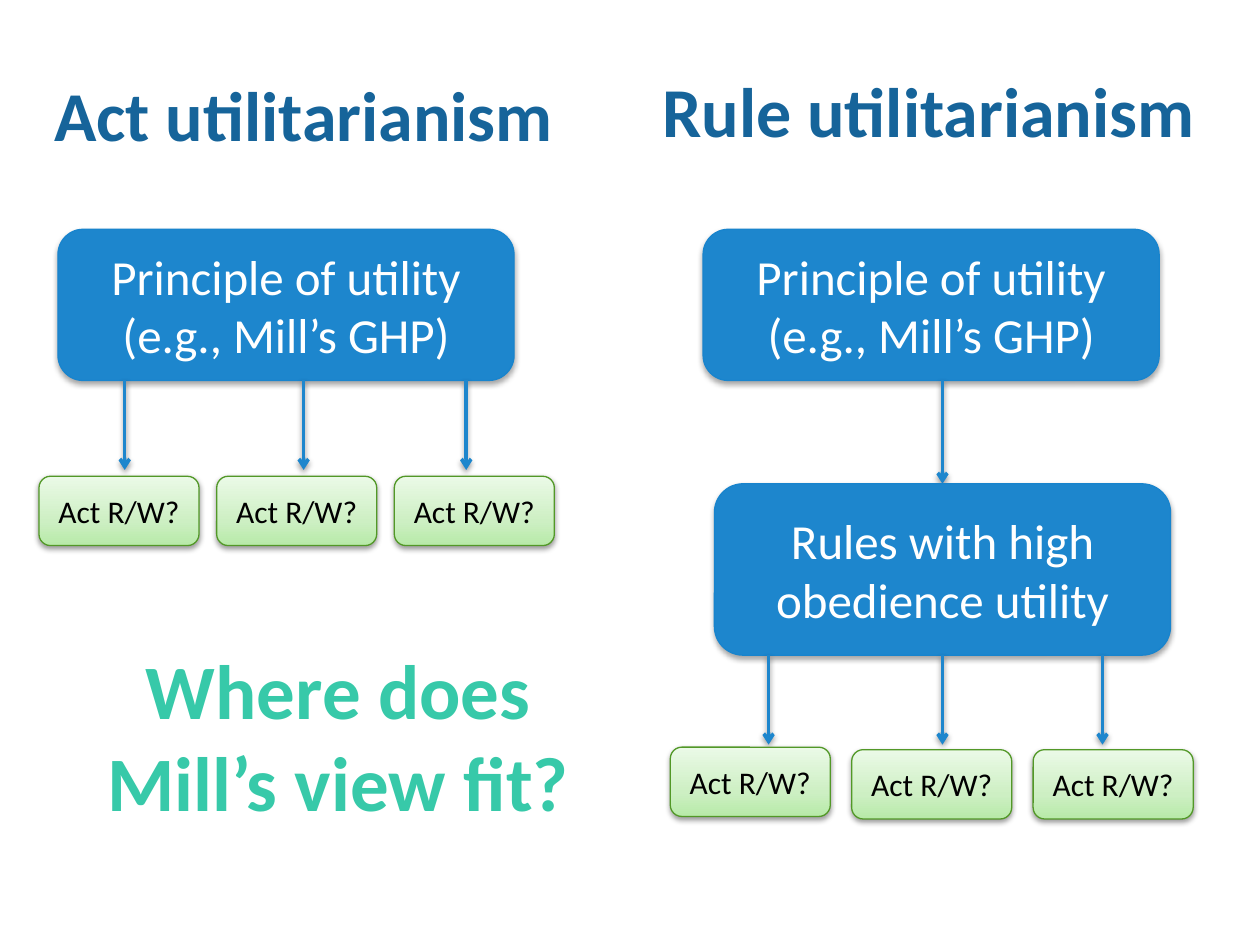
import copy

import pptx
import pptx.dml.color
import pptx.enum.shapes
import pptx.enum.text
import pptx.oxml
import pptx.oxml.ns
import pptx.util

FONT = "Calibri"
COLORS = {
    "heading": "16649A",
    "box": "1D86CD",
    "box_line": "1884CD",
    "box_text": "FFFFFF",
    "act_line": "529827",
    "act_text": "000000",
    "question": "37C9A9",
}
ACT_GRADIENT = [(0, "B7EAA8"), (0.35, "CDEFC3"), (1, "EBFAE7")]

BOX_WIDTH, BOX_HEIGHT, BOX_TOP = 3.62, 1.2, 1.82
RULES_TOP, RULES_HEIGHT = 3.84, 1.36
ACT_WIDTH, ACT_HEIGHT = 1.27, 0.55
ARROW_LENGTH = 0.71

qn = pptx.oxml.ns.qn
Inches = pptx.util.Inches


def rgb(name):
    return pptx.dml.color.RGBColor.from_string(COLORS.get(name, name))


def write_text(shape, text, size, color, align, bold=False):
    frame = shape.text_frame
    frame.word_wrap = True
    paragraph = frame.paragraphs[0]
    paragraph.text = text
    paragraph.alignment = align
    font = paragraph.font
    font.name, font.size, font.bold = FONT, pptx.util.Pt(size), bold
    font.color.rgb = rgb(color)


def add_shadow(shape, distance=20000, opacity=38):
    """Append a soft downward shadow; call after fill and line are set."""
    shape._element.spPr.append(pptx.oxml.parse_xml(
        f'<a:effectLst {pptx.oxml.ns.nsdecls("a")}>'
        f'<a:outerShdw blurRad="40000" dist="{distance}" dir="5400000" rotWithShape="0">'
        f'<a:srgbClr val="000000"><a:alpha val="{opacity * 1000}"/></a:srgbClr>'
        '</a:outerShdw></a:effectLst>'))


def format_label(shape, left, top, width, height, text, size, color, align):
    """Place bold text in a title placeholder or a text box."""
    shape.left, shape.top = Inches(left), Inches(top)
    shape.width, shape.height = Inches(width), Inches(height)
    write_text(shape, text, size, color, align, bold=True)
    shape.text_frame.vertical_anchor = pptx.enum.text.MSO_ANCHOR.TOP
    shape.text_frame.auto_size = pptx.enum.text.MSO_AUTO_SIZE.SHAPE_TO_FIT_TEXT


def add_rounded(slide, left, top, width, height, line_color):
    shape = slide.shapes.add_shape(
        pptx.enum.shapes.MSO_SHAPE.ROUNDED_RECTANGLE,
        Inches(left), Inches(top), Inches(width), Inches(height))
    shape.line.color.rgb = rgb(line_color)
    shape.line.width = pptx.util.Pt(0.75)
    shape.text_frame.vertical_anchor = pptx.enum.text.MSO_ANCHOR.MIDDLE
    return shape


def add_box(slide, left, top, height, text):
    shape = add_rounded(slide, left, top, BOX_WIDTH, height, "box_line")
    shape.fill.solid()
    shape.fill.fore_color.rgb = rgb("box")
    add_shadow(shape, distance=23000, opacity=35)
    write_text(shape, text, 28, "box_text", pptx.enum.text.PP_ALIGN.CENTER)


def add_act(slide, left, top):
    shape = add_rounded(slide, left, top, ACT_WIDTH, ACT_HEIGHT, "act_line")
    shape.fill.gradient()
    shape.fill.gradient_angle = 90
    # The default gradient has two stops; add the third
    stops = shape._element.spPr.find(".//" + qn("a:gsLst"))
    stops.append(copy.deepcopy(stops[0]))
    for stop, (position, color) in zip(shape.fill.gradient_stops, ACT_GRADIENT):
        stop.position = position
        stop.color.rgb = rgb(color)
    add_shadow(shape)
    write_text(shape, "Act R/W?", 18, "act_text", pptx.enum.text.PP_ALIGN.CENTER)


def add_arrow(slide, x, top, length=ARROW_LENGTH):
    arrow = slide.shapes.add_connector(
        pptx.enum.shapes.MSO_CONNECTOR.STRAIGHT,
        Inches(x), Inches(top), Inches(x), Inches(top + length))
    arrow.line.color.rgb = rgb("box")
    arrow.line.width = pptx.util.Pt(2)
    line = arrow._element.spPr.find(qn("a:ln"))
    line.append(pptx.oxml.parse_xml(
        f'<a:tailEnd {pptx.oxml.ns.nsdecls("a")} type="arrow"/>'))
    add_shadow(arrow)


def main():
    presentation = pptx.Presentation()
    presentation.slide_width, presentation.slide_height = Inches(10), Inches(7.5)
    slide = presentation.slides.add_slide(presentation.slide_layouts[5])
    left_align = pptx.enum.text.PP_ALIGN.LEFT
    center = pptx.enum.text.PP_ALIGN.CENTER
    principle = "Principle of utility (e.g., Mill’s GHP)"
    box_bottom = BOX_TOP + BOX_HEIGHT
    rules_bottom = RULES_TOP + RULES_HEIGHT

    # Act utilitarianism: the principle judges each act directly
    format_label(slide.shapes.title, 0.33, 0.52, 4.64, 0.77,
                 "Act utilitarianism", 40, "heading", left_align)
    add_box(slide, 0.46, BOX_TOP, BOX_HEIGHT, principle)
    for x in (0.99, 2.41, 3.7):
        add_arrow(slide, x, box_bottom)
    for column in range(3):
        add_act(slide, 0.31 + column * 1.41, 3.78)

    # Rule utilitarianism: the principle selects rules, which judge acts
    heading = slide.shapes.add_textbox(0, 0, 0, 0)
    format_label(heading, 5.16, 0.49, 4.64, 0.77,
                 "Rule utilitarianism", 40, "heading", left_align)
    add_box(slide, 5.58, BOX_TOP, BOX_HEIGHT, principle)
    add_arrow(slide, 7.48, box_bottom, RULES_TOP - box_bottom)
    add_box(slide, 5.67, RULES_TOP, RULES_HEIGHT, "Rules with high obedience utility")
    for x in (6.1, 7.48, 8.75):
        add_arrow(slide, x, rules_bottom)
    for column, top in enumerate((5.93, 5.95, 5.95)):
        add_act(slide, 5.32 + column * 1.44, top)

    # Closing question
    question = slide.shapes.add_textbox(0, 0, 0, 0)
    format_label(question, 0.37, 5.05, 4.63, 1.58,
                 "Where does Mill’s view fit?", 44, "question", center)

    presentation.save("out.pptx")


if __name__ == "__main__":
    main()
